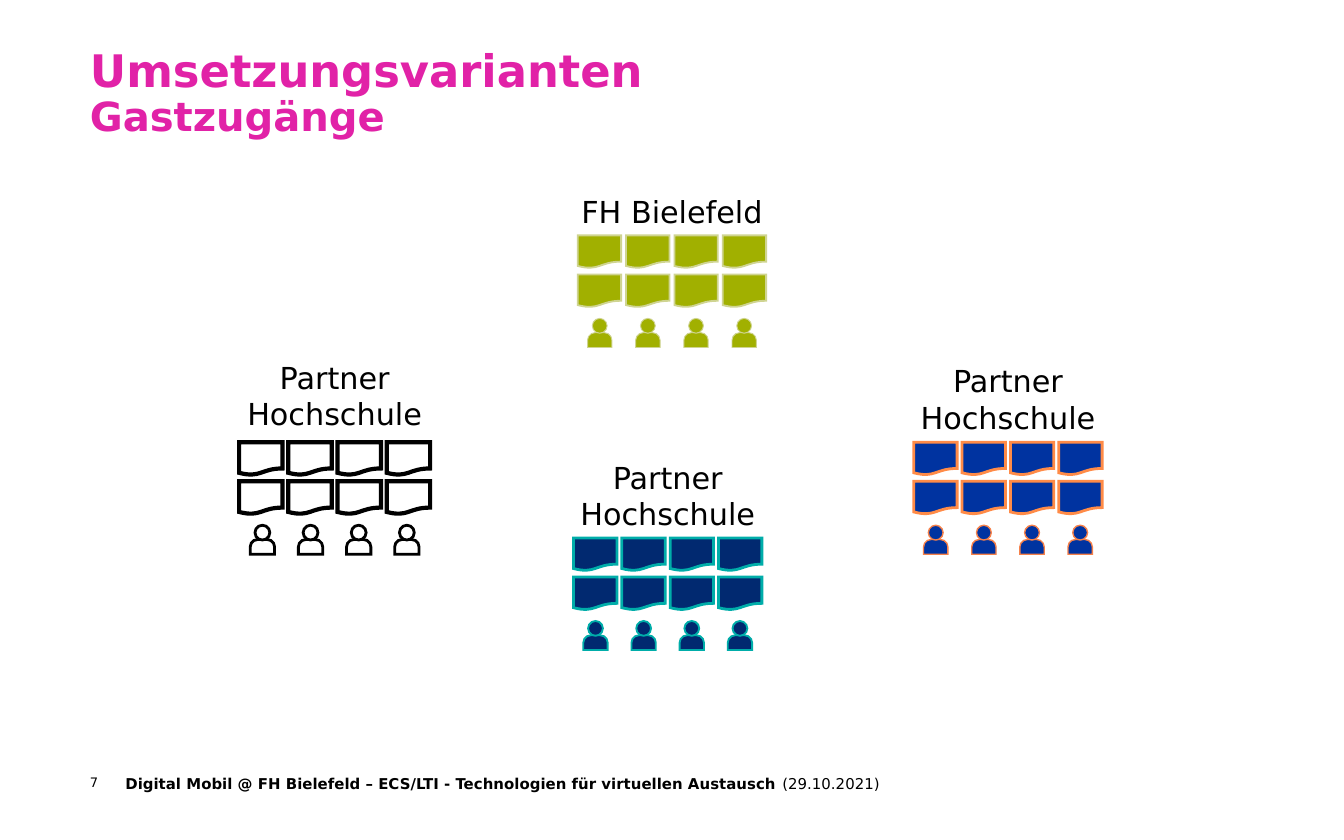
from lxml.etree import SubElement as Sub
from pptx import Presentation
from pptx.dml.color import RGBColor as RGB
from pptx.enum.shapes import MSO_SHAPE as Kind
from pptx.enum.text import MSO_ANCHOR as Anchor, MSO_AUTO_SIZE as Fit, PP_ALIGN as Align
from pptx.oxml.ns import qn
from pptx.util import Cm, Pt

FONT = "DejaVu Sans"
COLORS = {
    "title": "E122A7", "text": "000000", "white": "FFFFFF",
    "olive": "A1B000", "pale": "CFD491",
    "blue": "0033A0", "orange": "FF8B47", "coral": "F6814A",
    "navy": "012970", "teal": "00ADA9",
}
COLS, ROWS = 4, 2
DOC_W, DOC_H, ROW_GAP = 0.82, 0.62, 0.74
BODY_W, BODY_H, STEP = 0.46, 0.28, 0.91
HEAD, HEAD_Y, BODY_Y = 0.28, 1.57, 1.84
ICONS_H = 2.13  # documents and people together
PAD = 0.25  # side inset of a label

# name, box (left, top, width, height), fill, document line, people line, line widths
SCHOOLS = [
    ("FH Bielefeld", (10.92, 3.53, 3.56, 3.05), "olive", "pale", "pale", 1, 0.5),
    ("Partner\nHochschule", (17.27, 6.73, 3.56, 3.76), "blue", "orange", "coral", 1.5, 0.75),
    ("Partner\nHochschule", (4.52, 6.66, 3.61, 3.83), "white", "text", "text", 2.25, 1.5),
    ("Partner\nHochschule", (10.84, 8.56, 3.56, 3.74), "navy", "teal", "teal", 1.5, 1),
]


def color(name):
    return RGB.from_string(COLORS[name])


def style(font, size, bold=False, name="text"):
    font.name, font.size, font.bold = FONT, Pt(size), bold
    font.color.rgb = color(name)


def strip(frame):
    """Remove the insets of a text frame."""
    frame.margin_left = frame.margin_right = 0
    frame.margin_top = frame.margin_bottom = 0


def text_box(slide, x, y, w, h):
    frame = slide.shapes.add_textbox(Cm(x), Cm(y), Cm(w), Cm(h)).text_frame
    frame.word_wrap = True
    return frame


def icon(shapes, kind, x, y, w, h, fill, line, width):
    part = shapes.add_shape(kind, Cm(x), Cm(y), Cm(w), Cm(h))
    part.shadow.inherit = False
    part.fill.solid()
    part.fill.fore_color.rgb = color(fill)
    part.line.color.rgb = color(line)
    part.line.width = Pt(width)
    # Sharp corners
    Sub(part.element.spPr.find(qn("a:ln")), qn("a:miter"), lim="800000")
    return part


def person(slide, x, y, look):
    group = slide.shapes.add_group_shape().shapes
    body = icon(group, Kind.ROUND_2_SAME_RECTANGLE, x, y + BODY_Y, BODY_W, BODY_H, *look)
    body.adjustments[0] = 0.5
    icon(group, Kind.OVAL, x + (BODY_W - HEAD) / 2, y + HEAD_Y, HEAD, HEAD, *look)


def add_title(slide, x, y, w, h):
    title = slide.shapes.title
    title.left, title.top, title.width, title.height = Cm(x), Cm(y), Cm(w), Cm(h)
    frame = title.text_frame
    strip(frame)
    frame.auto_size, frame.vertical_anchor = Fit.NONE, Anchor.TOP
    frame.text = "Umsetzungsvarianten\nGastzugänge"
    for par, size in zip(frame.paragraphs, (24, 21.5)):
        par.alignment, par.line_spacing = Align.LEFT, 0.9
        style(par.font, size, True, "title")


def add_school(slide, name, box, fill, edge, rim, thick, thin):
    x, y, w, h = box
    # Label centred over the icons
    frame = text_box(slide, x - PAD, y, w + 2 * PAD, h - ICONS_H)
    frame.text = name
    for par in frame.paragraphs:
        par.alignment = Align.CENTER
        style(par.font, 16.2)
    # Grid of documents
    top = y + h - ICONS_H
    gap = (w - DOC_W) / (COLS - 1)
    for row in range(ROWS):
        for col in range(COLS):
            icon(slide.shapes, Kind.FLOWCHART_DOCUMENT, x + col * gap,
                 top + row * ROW_GAP, DOC_W, DOC_H, fill, edge, thick)
    # Row of people, centred below
    start = x + (w - BODY_W - STEP * (COLS - 1)) / 2
    for col in range(COLS):
        person(slide, start + col * STEP, top, (fill, rim, thin))


def add_footer(slide, x, y, w, h):
    indent = 0.67
    page = text_box(slide, x, y, indent, h)
    page.text = "7"
    style(page.paragraphs[0].font, 7)
    note = text_box(slide, x + indent, y, w - indent, h)
    for words, bold in (
        ("Digital Mobil @ FH Bielefeld – ECS/LTI - Technologien für virtuellen Austausch ", True),
        ("(29.10.2021)", False),
    ):
        run = note.paragraphs[0].add_run()
        run.text = words
        style(run.font, 8, bold)
    for frame in (page, note):
        strip(frame)


def main():
    deck = Presentation()
    deck.slide_width, deck.slide_height = Cm(25.4), Cm(15.88)
    slide = deck.slides.add_slide(deck.slide_layouts[5])
    add_title(slide, 1.7, 0.92, 22.15, 2.21)
    for school in SCHOOLS:
        add_school(slide, *school)
    add_footer(slide, 1.7, 14.64, 15.22, 0.33)
    deck.save("out.pptx")


if __name__ == "__main__":
    main()
